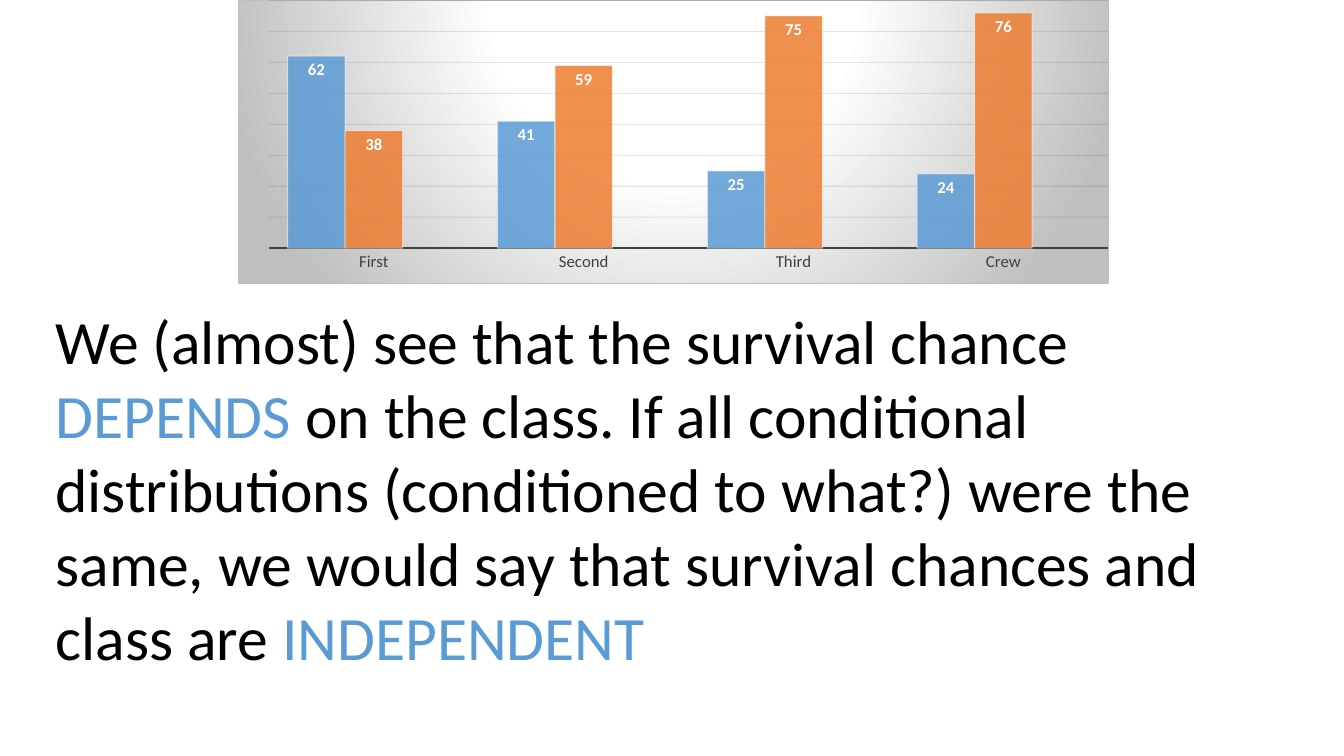
from lxml.etree import SubElement
from pptx import Presentation
from pptx.chart.data import CategoryChartData as ChartData
from pptx.dml.color import RGBColor as Color
from pptx.enum.chart import XL_CHART_TYPE as ChartType
from pptx.enum.chart import XL_LABEL_POSITION as LabelPosition
from pptx.enum.chart import XL_TICK_MARK as TickMark
from pptx.enum.text import MSO_AUTO_SIZE as AutoSize
from pptx.oxml import parse_xml
from pptx.oxml.ns import nsdecls, qn
from pptx.util import Pt

COLORS = {
    "text": "000000", "accent": "5B9BD5", "white": "FFFFFF", "axis": "404040",
    "grid": "0D0D0D", "edge": "BFBFBF",
}
FONT = "Calibri"
CLASSES = ["First", "Second", "Third", "Crew"]
SERIES = [
    ("Series 1", [62, 41, 25, 24], "5B9BD5"),
    ("Series 2", [38, 59, 75, 76], "ED7D31"),
    ("Series 3", [None] * 4, "A5A5A5"),
]
STATEMENT = [
    ("We (almost) see that the survival chance ", "text"),
    ("DEPENDS ", "accent"),
    ("on the class. If all conditional distributions (conditioned to what?) "
     "were the same, we would say that survival chances and class are ", "text"),
    ("INDEPENDENT", "accent"),
]


def style_font(font, size, color, bold=False):
    """Set the face, size, colour and weight of a font."""
    font.name, font.size, font.bold = FONT, Pt(size), bold
    font.color.rgb = Color.from_string(color)


def style_line(line, color, width):
    """Give a line a solid colour and a width."""
    line.color.rgb = Color.from_string(color)
    line.width = Pt(width)


def set_alphas(element, *percents):
    """Apply opacities to the colours inside an element, in order."""
    for color, percent in zip(element.iter(qn("a:srgbClr")), percents):
        SubElement(color, qn("a:alpha")).set("val", str(percent * 1000))


def add_backdrop(chart):
    """Fill the chart area with a radial gradient and a thin border."""
    stops = [(0, "white"), (39, "white"), (100, "edge")]
    stop_xml = "".join(
        f'<a:gs pos="{place * 1000}"><a:srgbClr val="{COLORS[name]}"/></a:gs>'
        for place, name in stops)
    backdrop = parse_xml(
        f'<c:spPr {nsdecls("c", "a")}><a:gradFill><a:gsLst>{stop_xml}</a:gsLst>'
        '<a:path path="circle">'
        '<a:fillToRect l="50000" t="-80000" r="50000" b="180000"/></a:path></a:gradFill>'
        f'<a:ln w="{Pt(0.75)}"><a:solidFill><a:srgbClr val="{COLORS["edge"]}"/>'
        '</a:solidFill></a:ln></c:spPr>')
    chart.element.find(qn("c:chart")).addnext(backdrop)


def place_plot(chart, x, y, w, h):
    """Fix the inner plot area as fractions of the chart."""
    area = chart.element.find(".//" + qn("c:plotArea"))
    for layout in area.findall(qn("c:layout")):
        area.remove(layout)
    sizes = "".join(f'<c:{tag} val="{value}"/>'
                    for tag, value in zip("xywh", (x, y, w, h)))
    area.insert(0, parse_xml(
        f'<c:layout {nsdecls("c")}><c:manualLayout><c:layoutTarget val="inner"/>'
        f'<c:xMode val="edge"/><c:yMode val="edge"/>{sizes}'
        '</c:manualLayout></c:layout>'))


def style_axes(chart):
    """Show the class axis and faint gridlines, and hide the value axis."""
    classes, values = chart.category_axis, chart.value_axis
    classes.major_tick_mark = classes.minor_tick_mark = TickMark.NONE
    style_font(classes.tick_labels.font, 12, COLORS["axis"])
    style_line(classes.format.line, COLORS["axis"], 2.25)
    classes.format.line.width = Pt(1.5)
    values.visible = False
    values.minimum_scale, values.maximum_scale, values.major_unit = 0, 80, 10
    values.has_major_gridlines = True
    style_line(values.major_gridlines.format.line, COLORS["grid"], 0.75)
    set_alphas(values._element.find(qn("c:majorGridlines")), 10)


def add_survival_chart(page, left, top, width, height):
    """Draw the survival percentages per class as clustered columns."""
    data = ChartData()
    data.categories = CLASSES
    for name, values, _ in SERIES:
        data.add_series(name, values)
    chart = page.shapes.add_chart(ChartType.COLUMN_CLUSTERED, Pt(left), Pt(top),
                                  Pt(width), Pt(height), data).chart
    chart.has_legend = chart.has_title = False
    style_font(chart.font, 10, COLORS["text"])
    add_backdrop(chart)
    place_plot(chart, 0.035, 0, 0.965, 0.875)
    style_axes(chart)
    plot = chart.plots[0]
    plot.gap_width, plot.overlap, plot.vary_by_categories = 65, 0, False
    for series, (_, _, color) in zip(plot.series, SERIES):
        series.format.fill.solid()
        series.format.fill.fore_color.rgb = Color.from_string(color)
        style_line(series.format.line, COLORS["white"], 0.75)
        set_alphas(series._element.find(qn("c:spPr")), 85, 50)
        labels = series.data_labels
        labels.show_value, labels.position = True, LabelPosition.INSIDE_END
        style_font(labels.font, 12, COLORS["white"], bold=True)


def add_statement(page, left, top, width, height):
    """Write the conclusion with its key words in the accent colour."""
    box = page.shapes.add_textbox(Pt(left), Pt(top), Pt(width), Pt(height))
    frame = box.text_frame
    frame.word_wrap = True
    frame.auto_size = AutoSize.SHAPE_TO_FIT_TEXT
    para = frame.paragraphs[0]
    for text, color in STATEMENT:
        span = para.add_run()
        span.text = text
        style_font(span.font, 44, COLORS[color])


def main():
    """Build the deck and save it."""
    deck = Presentation()
    deck.slide_width, deck.slide_height = Pt(960), Pt(540)
    page = deck.slides.add_slide(deck.slide_layouts[6])
    add_survival_chart(page, 170, 0, 622.5, 203)
    add_statement(page, 32.5, 213, 898.5, 273.5)
    deck.save("out.pptx")


if __name__ == "__main__":
    main()
